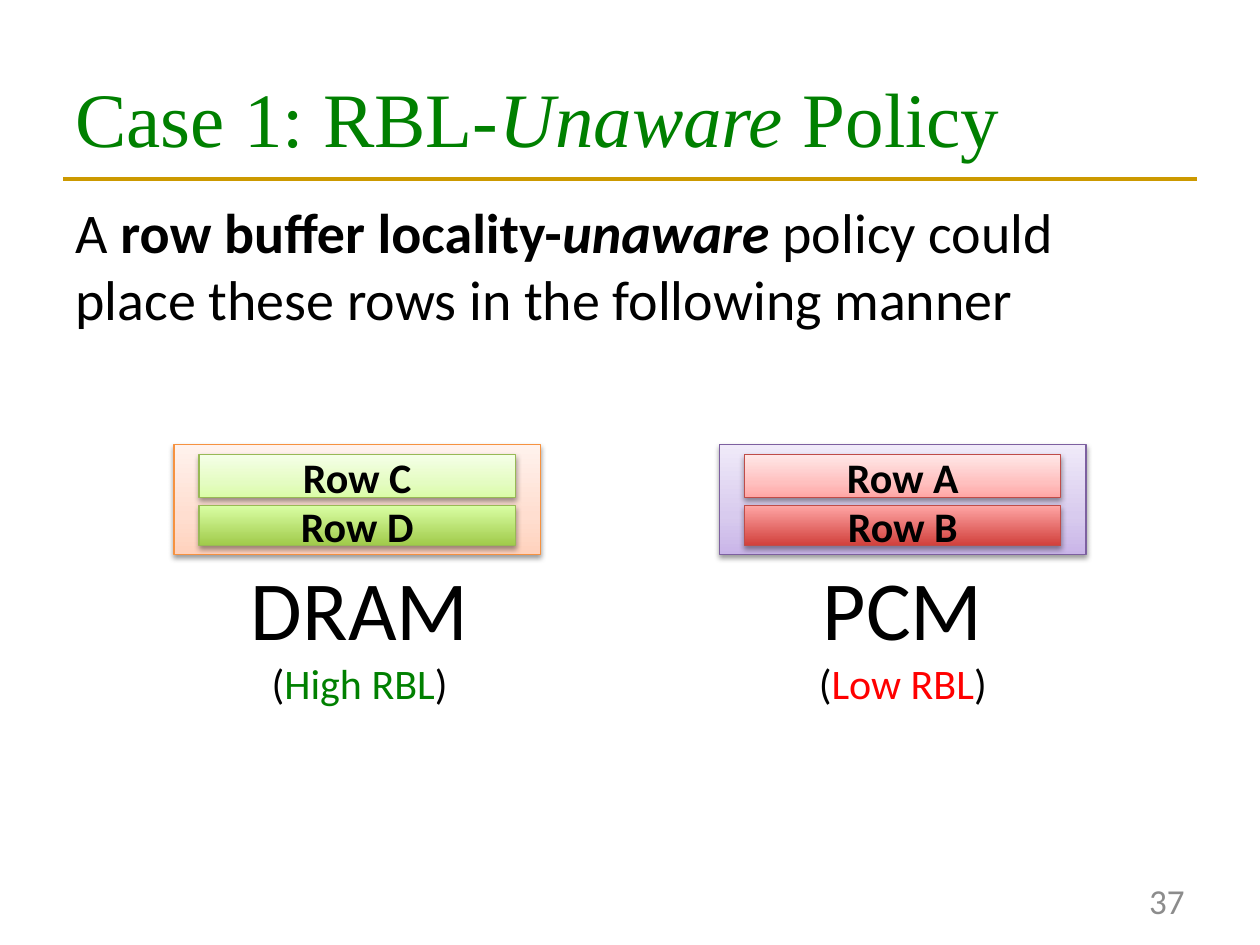
from lxml.etree import SubElement
from pptx import Presentation
from pptx.dml.color import RGBColor
from pptx.enum.shapes import MSO_CONNECTOR, MSO_SHAPE
from pptx.enum.text import MSO_ANCHOR, MSO_AUTO_SIZE, PP_ALIGN
from pptx.oxml.ns import qn
from pptx.util import Inches, Pt

BLACK = RGBColor(0, 0, 0)
GREEN = RGBColor(0, 128, 0)
RED = RGBColor(255, 0, 0)
GOLD = RGBColor(0xCC, 0x99, 0)
GRAY = RGBColor(0x8C, 0x8C, 0x8C)
ORANGE = RGBColor(0xF6, 0x92, 0x40)
PURPLE = RGBColor(0x7D, 0x60, 0xA0)
OLIVE = RGBColor(0x98, 0xB9, 0x55)
BRICK = RGBColor(0xBF, 0x4C, 0x48)

TITLE = [("Case 1: RBL-", ""), ("Unaware ", "i"), ("Policy", "")]
INTRO = [
    [("A ", ""), ("row buffer locality-", "b"), ("unaware ", "bi"),
     ("policy could", "")],
    [("place these rows in the following manner", "")],
]
UNITS = [
    dict(name="DRAM", note="High RBL", tint=GREEN, left=1.38, mid=2.855,
         wide=1.95, edge=ORANGE, fade=["FFD2BD", "FFDED0", "FFF2ED"],
         rim=OLIVE, rows=[("Row C", ["DAFDA7", "E4FCC2", "F5FFE7"]),
                          ("Row D", ["A0CA4A", "DAFFA5"])]),
    dict(name="PCM", note="Low RBL", tint=RED, left=5.71, mid=7.165,
         wide=1.55, edge=PURPLE, fade=["C9B5E8", "D8CBEE", "F0EAF9"],
         rim=BRICK, rows=[("Row A", ["FFA6A5", "FFC0BF", "FFE7E7"]),
                          ("Row B", ["D1403C", "FFA6A5"])]),
]
SLOTS = [(3.61, 0.34), (4.01, 0.32)]
STOPS = {2: (0, 100), 3: (0, 35, 100)}


def style(para, size, color=BLACK, face="Calibri", align=PP_ALIGN.LEFT):
    para.alignment = align
    para.font.size = Pt(size)
    para.font.name = face
    para.font.color.rgb = color


def add_runs(para, parts):
    for text, marks in parts:
        run = para.add_run()
        run.text = text
        if "b" in marks:
            run.font.bold = True
        if "i" in marks:
            run.font.italic = True


def add_text(slide, *box):
    frame = slide.shapes.add_textbox(*map(Inches, box)).text_frame
    frame.word_wrap = False
    return frame


def add_color(node, value):
    return SubElement(node, qn("a:srgbClr"), val=value)


def add_bar(slide, box, fade, edge):
    bar = slide.shapes.add_shape(MSO_SHAPE.RECTANGLE, *map(Inches, box))
    bar.fill.gradient()
    bar.fill.gradient_angle = 90
    stops = bar._element.spPr.find(".//" + qn("a:gsLst"))
    stops.clear()
    for spot, value in zip(STOPS[len(fade)], fade):
        add_color(SubElement(stops, qn("a:gs"), pos=str(spot * 1000)), value)
    bar.line.color.rgb = edge
    bar.line.width = Pt(0.75)
    bar.shadow.inherit = False
    glow = SubElement(
        bar._element.spPr.find(qn("a:effectLst")), qn("a:outerShdw"),
        blurRad=str(Pt(3.1)), dist=str(Pt(1.7)), dir="5400000", rotWithShape="0")
    SubElement(add_color(glow, "000000"), qn("a:alpha"), val="38000")
    return bar


def add_unit(slide, unit):
    left = unit["left"]
    add_bar(slide, (left, 3.53, 2.91, 0.87), unit["fade"], unit["edge"])

    wide = unit["wide"]
    para = add_text(slide, unit["mid"] - wide / 2, 4.37, wide, 1.31).paragraphs[0]
    style(para, 24, align=PP_ALIGN.CENTER)
    name = para.add_run()
    name.text = unit["name"]
    name.font.size = Pt(48)
    para.add_line_break()
    add_runs(para, [("(", ""), (unit["note"], ""), (")", "")])
    para.runs[2].font.color.rgb = unit["tint"]

    for (text, fade), (top, high) in zip(unit["rows"], SLOTS):
        bar = add_bar(slide, (left + 0.2, top, 2.51, high), fade, unit["rim"])
        frame = bar.text_frame
        frame.vertical_anchor = MSO_ANCHOR.MIDDLE
        para = frame.paragraphs[0]
        para.text = text
        style(para, 24, align=PP_ALIGN.CENTER)
        para.font.bold = True


def main():
    deck = Presentation()
    deck.slide_width, deck.slide_height = Inches(10), Inches(7.5)
    slide = deck.slides.add_slide(deck.slide_layouts[5])

    rule = slide.shapes.add_connector(
        MSO_CONNECTOR.STRAIGHT, Inches(0.5), Inches(1.42), Inches(9.5), Inches(1.42))
    rule.line.color.rgb = GOLD
    rule.line.width = Pt(2.25)
    SubElement(rule._element.spPr, qn("a:effectLst"))

    title = slide.shapes.title
    title.left, title.top, title.width, title.height = map(
        Inches, (0.5, 0.3, 9, 1.25))
    frame = title.text_frame
    frame.auto_size = MSO_AUTO_SIZE.NONE
    frame.vertical_anchor = MSO_ANCHOR.MIDDLE
    add_runs(frame.paragraphs[0], TITLE)
    style(frame.paragraphs[0], 44, GREEN, "Times New Roman")

    frame = add_text(slide, 7.17, 6.95, 2.33, 0.4)
    frame.word_wrap = True
    frame.vertical_anchor = MSO_ANCHOR.MIDDLE
    frame.paragraphs[0].text = "37"
    style(frame.paragraphs[0], 20, GRAY, align=PP_ALIGN.RIGHT)

    frame = add_text(slide, 0.5, 1.52, 8.03, 1.18)
    frame.add_paragraph()
    for para, parts in zip(frame.paragraphs, INTRO):
        add_runs(para, parts)
        style(para, 32)

    for unit in UNITS:
        add_unit(slide, unit)
    deck.save("out.pptx")


if __name__ == "__main__":
    main()
